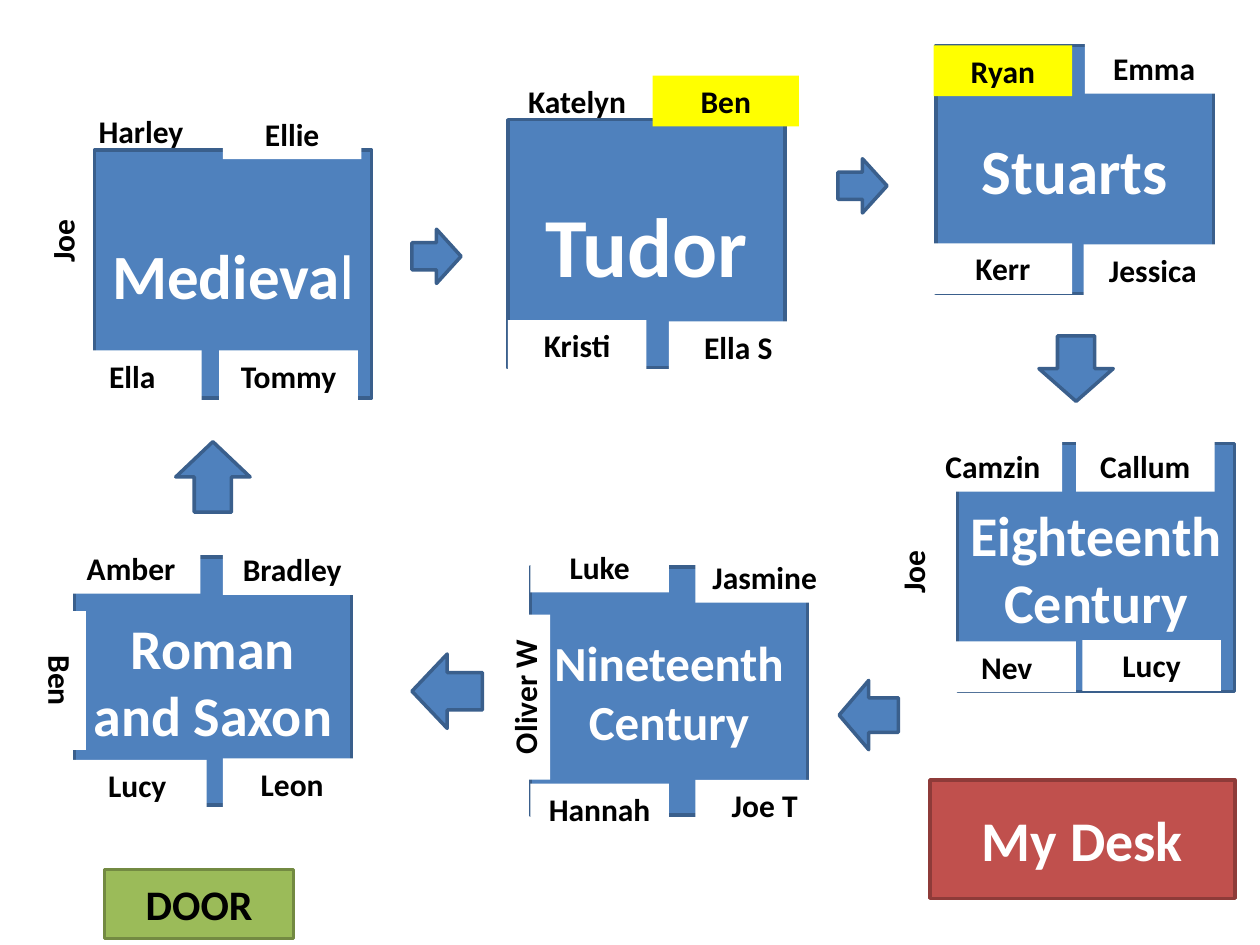
"""Build a classroom seating plan with six history tables, linked by arrows."""
from dataclasses import dataclass
from typing import Optional

from pptx import Presentation
from pptx.dml.color import RGBColor
from pptx.enum.shapes import MSO_SHAPE as Preset
from pptx.enum.text import MSO_ANCHOR as Anchor, MSO_AUTO_SIZE as AutoSize, PP_ALIGN as Align
from pptx.util import Pt

BLUE = RGBColor(0x4F, 0x81, 0xBD)
BLUE_EDGE = RGBColor(0x3A, 0x5F, 0x8C)
RED = RGBColor(0xC0, 0x50, 0x4D)
RED_EDGE = RGBColor(0x8E, 0x3B, 0x39)
GREEN = RGBColor(0x9B, 0xBB, 0x59)
GREEN_EDGE = RGBColor(0x73, 0x8A, 0x42)
YELLOW = RGBColor(0xFF, 0xFF, 0x00)
WHITE = RGBColor(0xFF, 0xFF, 0xFF)
BLACK = RGBColor(0, 0, 0)

FONT = "Calibri"
TABLE_WIDTH, TABLE_HEIGHT = 158.4, 141.8
SEAT_WIDTH, SEAT_HEIGHT = 79.2, 29


@dataclass
class Seat:
    name: str
    left: float
    top: float
    width: float = SEAT_WIDTH
    fill: Optional[RGBColor] = WHITE
    rotation: float = 0


@dataclass
class Block:
    text: str
    size: float
    left: float
    top: float
    width: float = TABLE_WIDTH
    height: float = TABLE_HEIGHT
    fill: RGBColor = BLUE
    edge: RGBColor = BLUE_EDGE
    color: RGBColor = WHITE
    light_ending: str = ""
    seats: tuple[Seat, ...] = ()


@dataclass
class Arrow:
    left: float
    top: float
    width: float
    height: float
    rotation: float = 0


BLOCKS = (
    Block("Roman and Saxon", 32, 42.5, 318.2, seats=(
        Seat("Amber", 35.3, 310.3), Seat("Bradley", 127.4, 311),
        Seat("Lucy", 38.9, 434.2), Seat("Leon", 127.4, 433.4),
        Seat("Ben", -5, 374.4, rotation=90))),
    Block("Medieva", 36, 54, 85.7, light_ending="l", seats=(
        Seat("Harley", 41, 60.5, fill=None), Seat("Ellie", 127.4, 61.9),
        Seat("Ella", 36, 200.2), Seat("Tommy", 125.3, 200.2),
        Seat("Joe", -18, 123.1, 107.3, rotation=270))),
    Block("Tudor", 48, 290.2, 68.4, seats=(
        Seat("Katelyn", 290.2, 43.2, fill=None), Seat("Ben", 373, 43.2, 83.5, YELLOW),
        Seat("Kristi", 290.2, 182.9), Seat("Ella S", 382.3, 183.6))),
    Block("Stuarts", 36, 535, 25.9, seats=(
        Seat("Ryan", 533.5, 25.9, fill=YELLOW), Seat("Emma", 619.9, 24.5),
        Seat("Kerr", 533.5, 139), Seat("Jessica", 619.2, 139.7))),
    Block("Eighteenth Century", 32, 547.2, 253.4, seats=(
        Seat("Camzin", 527.8, 252), Seat("Callum", 614.9, 252),
        Seat("Nev", 535.7, 366.5), Seat("Lucy", 618.5, 365.8),
        Seat("Joe", 475.9, 312.5, 91.4, rotation=270))),
    Block("Nineteenth Century", 28, 303.1, 324, seats=(
        Seat("Luke", 303.1, 309.6), Seat("Jasmine", 397.4, 315.4),
        Seat("Hannah", 303.1, 447.8), Seat("Joe T", 397.4, 445.7),
        Seat("Oliver W", 252.7, 383.8, 94.3, rotation=270))),
    Block("My Desk", 32, 531.4, 445.7, 174.2, 67.7, RED, RED_EDGE),
    Block("DOOR", 24, 59.8, 496.8, 108, 39.6, GREEN, GREEN_EDGE, BLACK),
)

ARROWS = (
    Arrow(235.4, 131, 28.1, 31),
    Arrow(478.8, 90.7, 28.1, 31),
    Arrow(596.2, 189.4, 37.4, 42.5, 90),
    Arrow(479.5, 388.8, 33.8, 39.6, 180),
    Arrow(235.4, 373.7, 40.3, 42.5, 180),
    Arrow(101.5, 251.3, 40.3, 42.5, 270),
)


def add_run(paragraph, text: str, size: float, color: RGBColor, bold: bool = True) -> None:
    run = paragraph.add_run()
    run.text = text
    run.font.name = FONT
    run.font.size = Pt(size)
    run.font.bold = bold
    run.font.color.rgb = color


def add_outlined(slide, preset, item: Block | Arrow, fill: RGBColor, edge: RGBColor):
    shape = slide.shapes.add_shape(
        preset, Pt(item.left), Pt(item.top), Pt(item.width), Pt(item.height))
    shape.shadow.inherit = False
    shape.fill.solid()
    shape.fill.fore_color.rgb = fill
    shape.line.color.rgb = edge
    shape.line.width = Pt(2)
    return shape


def draw_seat(slide, seat: Seat) -> None:
    shape = slide.shapes.add_textbox(
        Pt(seat.left), Pt(seat.top), Pt(seat.width), Pt(SEAT_HEIGHT))
    shape.rotation = seat.rotation
    if seat.fill is not None:
        shape.fill.solid()
        shape.fill.fore_color.rgb = seat.fill
    frame = shape.text_frame
    frame.word_wrap = True
    frame.auto_size = AutoSize.SHAPE_TO_FIT_TEXT
    paragraph = frame.paragraphs[0]
    paragraph.alignment = Align.CENTER
    add_run(paragraph, seat.name, 18, BLACK)


def draw_block(slide, block: Block) -> None:
    shape = add_outlined(slide, Preset.RECTANGLE, block, block.fill, block.edge)
    frame = shape.text_frame
    frame.word_wrap = True
    frame.vertical_anchor = Anchor.MIDDLE
    paragraph = frame.paragraphs[0]
    paragraph.alignment = Align.CENTER
    add_run(paragraph, block.text, block.size, block.color)
    if block.light_ending:
        add_run(paragraph, block.light_ending, block.size, block.color, bold=False)
    for seat in block.seats:
        draw_seat(slide, seat)


def draw_arrow(slide, arrow: Arrow) -> None:
    shape = add_outlined(slide, Preset.RIGHT_ARROW, arrow, BLUE, BLUE_EDGE)
    shape.rotation = arrow.rotation


def main() -> None:
    presentation = Presentation()
    presentation.slide_width, presentation.slide_height = Pt(720), Pt(540)
    slide = presentation.slides.add_slide(presentation.slide_layouts[6])
    for block in BLOCKS:
        draw_block(slide, block)
    for arrow in ARROWS:
        draw_arrow(slide, arrow)
    presentation.save("out.pptx")


if __name__ == "__main__":
    main()
